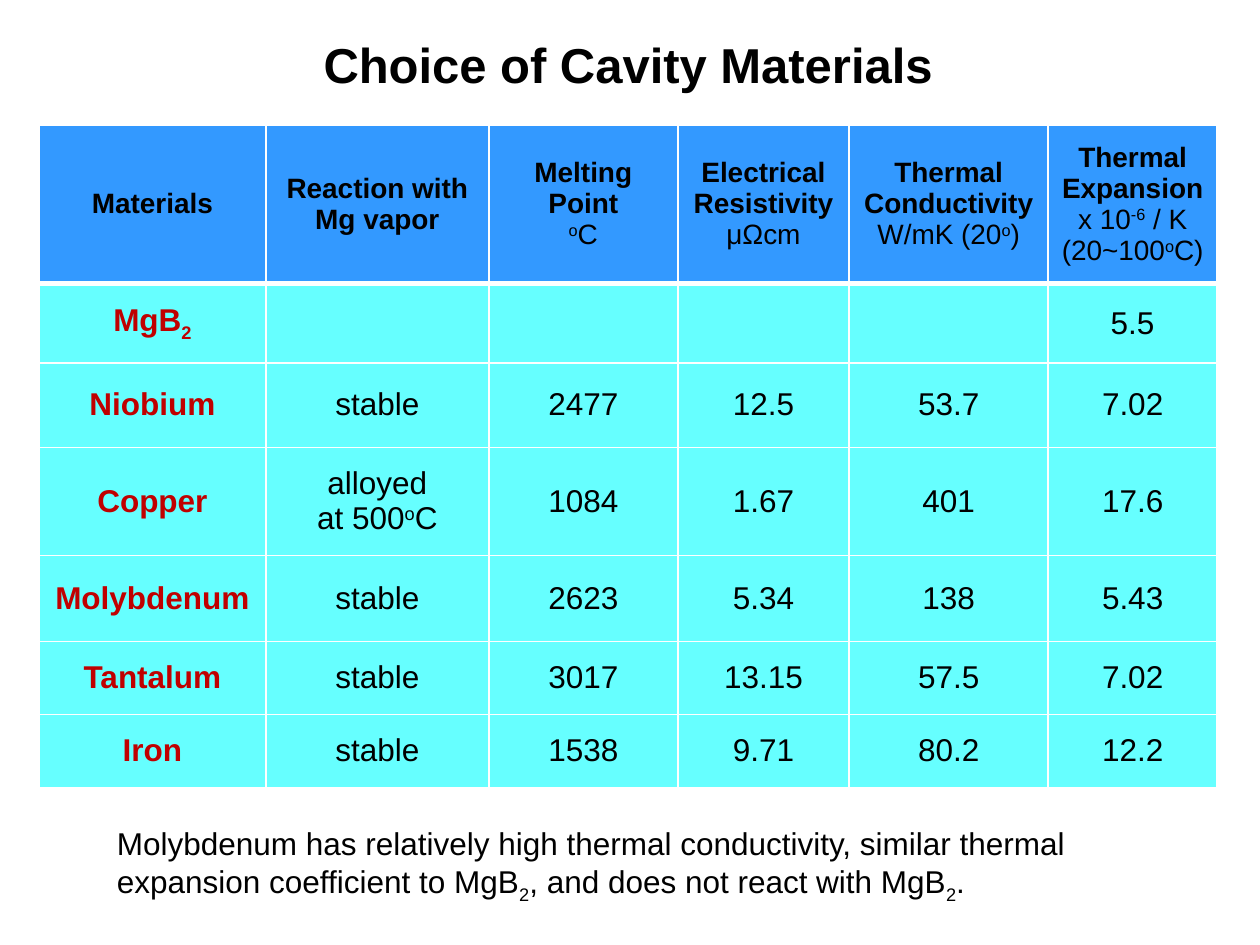
"""Build a slide comparing candidate cavity materials."""
import dataclasses

import lxml.etree
import pptx
import pptx.dml.color
import pptx.enum.text
import pptx.oxml.ns
import pptx.util

COLORS = {"ink": "000000", "material": "C00000", "header": "3399FF",
          "body": "66FFFF", "border": "FFFFFF"}
GRID_COLUMNS, GRID_ROWS = 1000, 750
UNIT = pptx.util.Inches(10) // GRID_COLUMNS
ALIGN = pptx.enum.text.PP_ALIGN
MIDDLE = pptx.enum.text.MSO_ANCHOR.MIDDLE
BASELINES = {"^": "30000", "_": "-25000"}


@dataclasses.dataclass(frozen=True)
class Box:
    """Place on the grid, in columns and rows."""
    column: int
    row: int
    columns: int
    rows: int

    def lengths(self) -> list[int]:
        return [UNIT * n for n in dataclasses.astuple(self)]


@dataclasses.dataclass(frozen=True)
class Property:
    """One table column: its heading, unit and width."""
    heading: str
    unit: str
    columns: int


@dataclasses.dataclass(frozen=True)
class Material:
    """One table row: its height, name and values."""
    rows: int
    name: str
    values: tuple[str, ...]


PROPERTIES = [
    Property("Materials", "", 180),
    Property("Reaction with Mg vapor", "", 177),
    Property("Melting Point", "{^o}C", 150),
    Property("Electrical Resistivity", "μΩcm", 136),
    Property("Thermal Conductivity", "W/mK (20{^o})", 158),
    Property("Thermal Expansion", "x 10{^-6} / K (20~100{^o}C)", 134),
]
MATERIALS = [
    Material(63, "MgB{_2}", ("", "", "", "", "5.5")),
    Material(67, "Niobium", ("stable", "2477", "12.5", "53.7", "7.02")),
    Material(86, "Copper", ("alloyed\nat 500{^o}C", "1084", "1.67", "401", "17.6")),
    Material(68, "Molybdenum", ("stable", "2623", "5.34", "138", "5.43")),
    Material(58, "Tantalum", ("stable", "3017", "13.15", "57.5", "7.02")),
    Material(58, "Iron", ("stable", "1538", "9.71", "80.2", "12.2")),
]
HEADER_ROWS = 126
TITLE_BOX = Box(40, 28, 917, 45)
NOTE_BOX = Box(83, 649, 842, 71)
TABLE_BOX = Box(31, 99, sum(p.columns for p in PROPERTIES),
                HEADER_ROWS + sum(m.rows for m in MATERIALS))


def rgb(name: str) -> pptx.dml.color.RGBColor:
    return pptx.dml.color.RGBColor.from_string(COLORS[name])


def write(frame, text: str, *, size: int = 18, color: str = "ink",
          bold_lines: int = 0, align=ALIGN.CENTER) -> None:
    """Write lines of text; {^x} raises x and {_x} lowers it."""
    frame.word_wrap = True
    for number, line in enumerate(text.split("\n")):
        paragraph = frame.add_paragraph() if number else frame.paragraphs[0]
        paragraph.alignment = align
        for piece in line.replace("}", "{").split("{"):
            if not piece:
                continue
            baseline = BASELINES.get(piece[0])
            run = paragraph.add_run()
            run.text = piece[1:] if baseline else piece
            run.font.name = "Arial"
            run.font.size = pptx.util.Pt(size)
            run.font.bold = number < bold_lines
            run.font.color.rgb = rgb(color)
            if baseline:
                run._r.get_or_add_rPr().set("baseline", baseline)


def set_borders(cell, *, top: int = 1, bottom: int = 1) -> None:
    qn = pptx.oxml.ns.qn
    properties = cell._tc.get_or_add_tcPr()
    widths = {"a:lnL": 1, "a:lnR": 1, "a:lnT": top, "a:lnB": bottom}
    for place, (side, points) in enumerate(widths.items()):
        line = lxml.etree.Element(qn(side), w=str(pptx.util.Pt(points)))
        fill = lxml.etree.SubElement(line, qn("a:solidFill"))
        lxml.etree.SubElement(fill, qn("a:srgbClr"), val=COLORS["border"])
        properties.insert(place, line)


def fill_cell(cell, text: str, *, fill: str, top: int = 1, bottom: int = 1,
              **text_format) -> None:
    cell.vertical_anchor = MIDDLE
    cell.fill.solid()
    cell.fill.fore_color.rgb = rgb(fill)
    set_borders(cell, top=top, bottom=bottom)
    write(cell.text_frame, text, **text_format)


def add_materials_table(slide) -> None:
    table = slide.shapes.add_table(len(MATERIALS) + 1, len(PROPERTIES),
                                   *TABLE_BOX.lengths()).table
    table.horz_banding = False
    table.rows[0].height = UNIT * HEADER_ROWS
    for column, prop in enumerate(PROPERTIES):
        table.columns[column].width = UNIT * prop.columns
        heading = "\n".join(filter(None, (prop.heading, prop.unit)))
        fill_cell(table.cell(0, column), heading, fill="header", bottom=3,
                  size=16, bold_lines=1)
    for row, material in enumerate(MATERIALS, start=1):
        table.rows[row].height = UNIT * material.rows
        top = 3 if row == 1 else 1
        fill_cell(table.cell(row, 0), material.name, fill="body", top=top,
                  color="material", bold_lines=1)
        for column, value in enumerate(material.values, start=1):
            fill_cell(table.cell(row, column), value, fill="body", top=top)


def main() -> None:
    deck = pptx.Presentation()
    deck.slide_width, deck.slide_height = UNIT * GRID_COLUMNS, UNIT * GRID_ROWS
    slide = deck.slides.add_slide(deck.slide_layouts[5])
    add_materials_table(slide)
    title = slide.shapes.title
    title.left, title.top, title.width, title.height = TITLE_BOX.lengths()
    title.text_frame.vertical_anchor = MIDDLE
    title.text_frame.auto_size = pptx.enum.text.MSO_AUTO_SIZE.NONE
    write(title.text_frame, "Choice of Cavity Materials", size=28, bold_lines=1)
    note = slide.shapes.add_textbox(*NOTE_BOX.lengths())
    write(note.text_frame,
          "Molybdenum has relatively high thermal conductivity, similar thermal "
          "expansion coefficient to MgB{_2}, and does not react with MgB{_2}.",
          align=ALIGN.LEFT)
    deck.save("out.pptx")


if __name__ == "__main__":
    main()
